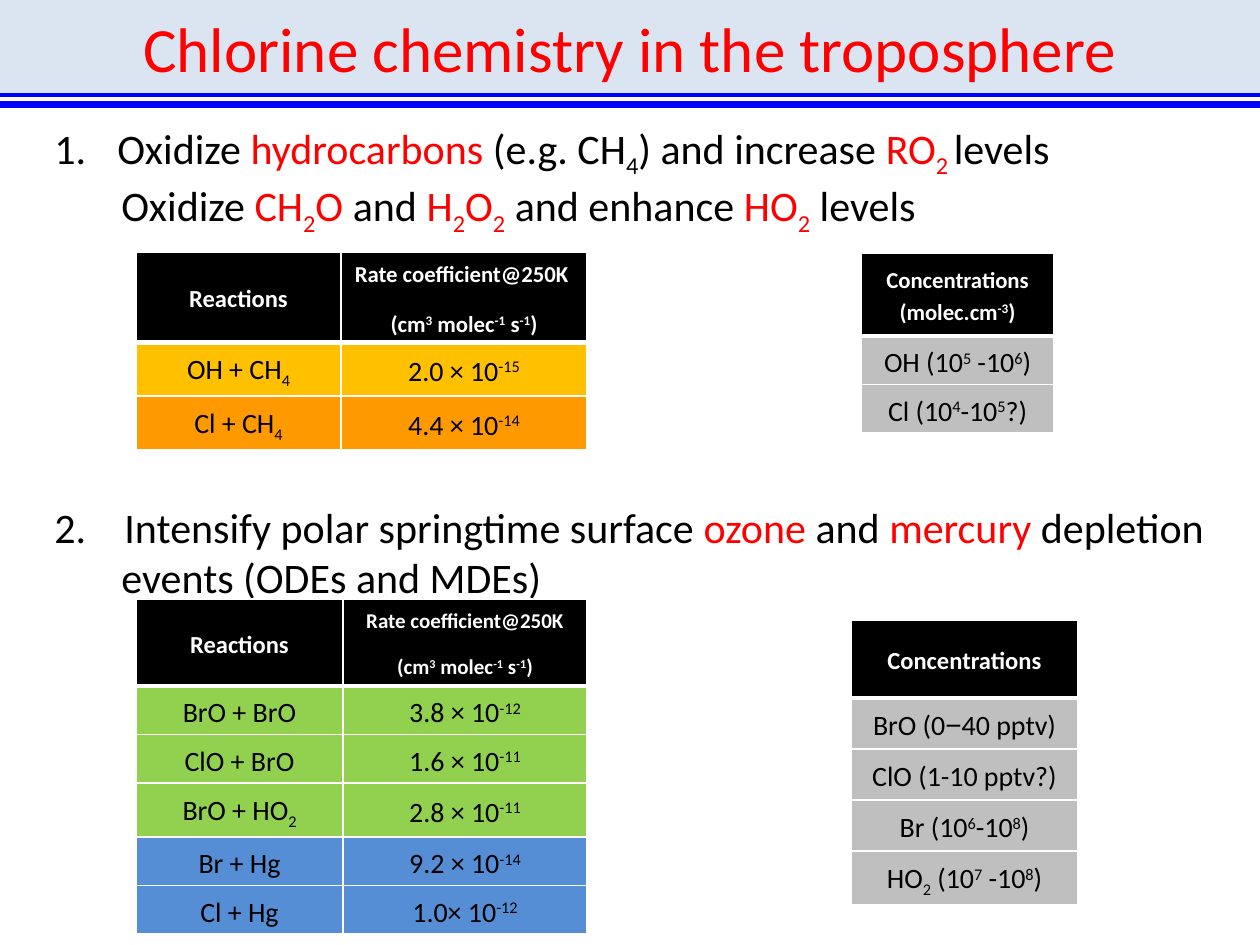
from lxml.etree import SubElement
from pptx import Presentation
from pptx.dml.color import RGBColor
from pptx.enum.shapes import MSO_CONNECTOR, MSO_SHAPE
from pptx.enum.text import MSO_ANCHOR, PP_ALIGN
from pptx.oxml.ns import qn
from pptx.util import Pt

EMU_PER_PX = 914400 / 126
COLORS = {
    "black": "000000", "white": "FFFFFF", "red": "FF0000", "blue": "0000FF",
    "band": "4F81BD", "amber": "FFC000", "orange": "FF9900",
    "green": "92D050", "sky": "558ED5", "gray": "BFBFBF",
}
RGB = {name: RGBColor.from_string(value) for name, value in COLORS.items()}


def px(n):
    return round(n * EMU_PER_PX)


def write(p, text, size, color="black", bold=False):
    """Add runs split at "|"; a run may begin with * red, _ subscript, ^ superscript, ~ Arial."""
    for part in text.split("|"):
        body = part.lstrip("*_^~")
        marks = part[:len(part) - len(body)]
        r = p.add_run()
        r.text = body
        font = {"size": Pt(size), "bold": bold, "name": "Arial" if "~" in marks else "Calibri"}
        for key, value in font.items():
            setattr(r.font, key, value)
        r.font.color.rgb = RGB["red" if "*" in marks else color]
        for mark, baseline in (("_", "-25000"), ("^", "30000")):
            if mark in marks:
                r.font._element.set("baseline", baseline)


prs = Presentation()
prs.slide_width, prs.slide_height = px(1260), px(945)
slide = prs.slides.add_slide(prs.slide_layouts[6])
shapes = slide.shapes

# Title band, title and double rule
sp = shapes.add_shape(MSO_SHAPE.RECTANGLE, 0, 0, px(1260), px(95))
sp.shadow.inherit = False
sp.line.fill.background()
sp.fill.solid()
sp.fill.fore_color.rgb = RGB["band"]
SubElement(sp._element.spPr.find(".//" + qn("a:srgbClr")), qn("a:alpha"), val="20000")

tf = shapes.add_textbox(0, px(-32), px(1260), px(158)).text_frame
tf.word_wrap = True
tf.vertical_anchor = MSO_ANCHOR.MIDDLE
tf.paragraphs[0].alignment = PP_ALIGN.CENTER
write(tf.paragraphs[0], "Chlorine chemistry in the troposphere", 36, "red")

for y, width in ((95, 2), (105, 4)):
    rule = shapes.add_connector(MSO_CONNECTOR.STRAIGHT, 0, px(y), px(1260), px(y))
    rule.line.color.rgb = RGB["blue"]
    rule.line.width = Pt(width)
    SubElement(rule._element.spPr, qn("a:effectLst"))

# Numbered statements: number, left margin, space before in points, text
STATEMENTS = [
    (1, 63, 0, "Oxidize |*hydrocarbons| (e.g. CH|_4|) and increase |*RO|*_2 |levels"),
    (None, 67, 0, "Oxidize |*CH|*_2|*O| and |*H|*_2|*O|*_2| and enhance |*HO|*_2| levels"),
    (2, 70, 151, "Intensify polar springtime surface |*ozone| and |*mercury |depletion"),
    (None, 67, 0, "events (ODEs and MDEs)"),
]
tf = shapes.add_textbox(px(42), px(116), px(1218), px(534)).text_frame
tf.word_wrap = True
for i, (number, margin, before, text) in enumerate(STATEMENTS):
    p = tf.add_paragraph() if i else tf.paragraphs[0]
    p.space_before = Pt(before)
    write(p, text, 24)
    pPr = p._p.get_or_add_pPr()
    pPr.set("marL", str(px(margin)))
    if number:
        pPr.set("indent", str(px(-margin)))
        SubElement(pPr, qn("a:buFont"), typeface="+mj-lt")
        SubElement(pPr, qn("a:buAutoNum"), type="arabicPeriod", startAt=str(number))

# Tables: position, columns, header height, row height, side margin,
# header cells as (text, size), body rows as (fill, texts)
RATE_UNIT = "(cm|^3| molec|^-1| s|^-1|)"
TABLES = [
    ((136, 252), (205, 246), 88, 47, 10,
     [("Reactions", 14), ("Rate coefficient@250K \n" + RATE_UNIT, 13)],
     [("amber", ["OH + CH|_4", "2.0 × 10|^-15"]),
      ("orange", ["Cl + CH|_4", "4.4 × 10|^-14"])]),
    ((861, 253), (193,), 83, 47, 9,
     [("Concentrations (molec.cm|^-3|)", 13)],
     [("gray", ["OH (10|^5| -10|^6|)"]),
      ("gray", ["Cl (10|^4|-10|^5|?)"])]),
    ((136, 599), (207, 244), 87, 47, 9,
     [("Reactions", 14), ("Rate coefficient@250K\n" + RATE_UNIT, 12)],
     [("green", ["BrO + BrO", "3.8 × 10|^-12"]),
      ("green", ["ClO + BrO", "1.6 × 10|^-11"]),
      ("green", ["BrO + HO|_2", "2.8 × 10|^-11"]),
      ("sky", ["Br + Hg", "9.2 × 10|^-14"]),
      ("sky", ["Cl + Hg", "1.0× 10|^-12"])]),
    ((851, 620), (227,), 78, 51, 10,
     [("Concentrations", 14)],
     [("gray", ["BrO (0|~−|40 pptv)"]),
      ("gray", ["ClO (1-10 pptv?)"]),
      ("gray", ["Br (10|^6|-10|^8|)"]),
      ("gray", ["HO|_2| (10|^7| -10|^8|)"])]),
]
for (x, y), widths, head_h, row_h, side, header, body in TABLES:
    rows = [("black", header)] + [(fill, [(t, 16) for t in texts]) for fill, texts in body]
    heights = [head_h] + [row_h] * len(body)
    table = shapes.add_table(len(rows), len(widths), px(x), px(y),
                             px(sum(widths)), px(sum(heights))).table
    table.horz_banding = False
    for column, width in zip(table.columns, widths):
        column.width = px(width)
    for i, (fill, cells) in enumerate(rows):
        table.rows[i].height = px(heights[i])
        for j, (text, size) in enumerate(cells):
            cell = table.cell(i, j)
            layout = {"margin_left": px(side), "margin_right": px(side), "margin_top": px(5),
                      "margin_bottom": px(5), "vertical_anchor": MSO_ANCHOR.MIDDLE}
            for key, value in layout.items():
                setattr(cell, key, value)
            for k, line in enumerate(text.split("\n")):
                p = cell.text_frame.add_paragraph() if k else cell.text_frame.paragraphs[0]
                p.alignment = PP_ALIGN.CENTER
                p.line_spacing = 1.15
                p.space_after = Pt(10)
                write(p, line, size, "black" if i else "white", bold=i == 0)
            tcPr = cell._tc.get_or_add_tcPr()
            thick = 3 if i == 0 else 1
            for edge, width in (("L", 1), ("R", 1), ("T", 3 if i == 1 else 1), ("B", thick)):
                ln = SubElement(tcPr, qn("a:ln" + edge), w=str(Pt(width)))
                SubElement(SubElement(ln, qn("a:solidFill")), qn("a:srgbClr"), val=COLORS["white"])
            cell.fill.solid()
            cell.fill.fore_color.rgb = RGB[fill]

prs.save("out.pptx")
